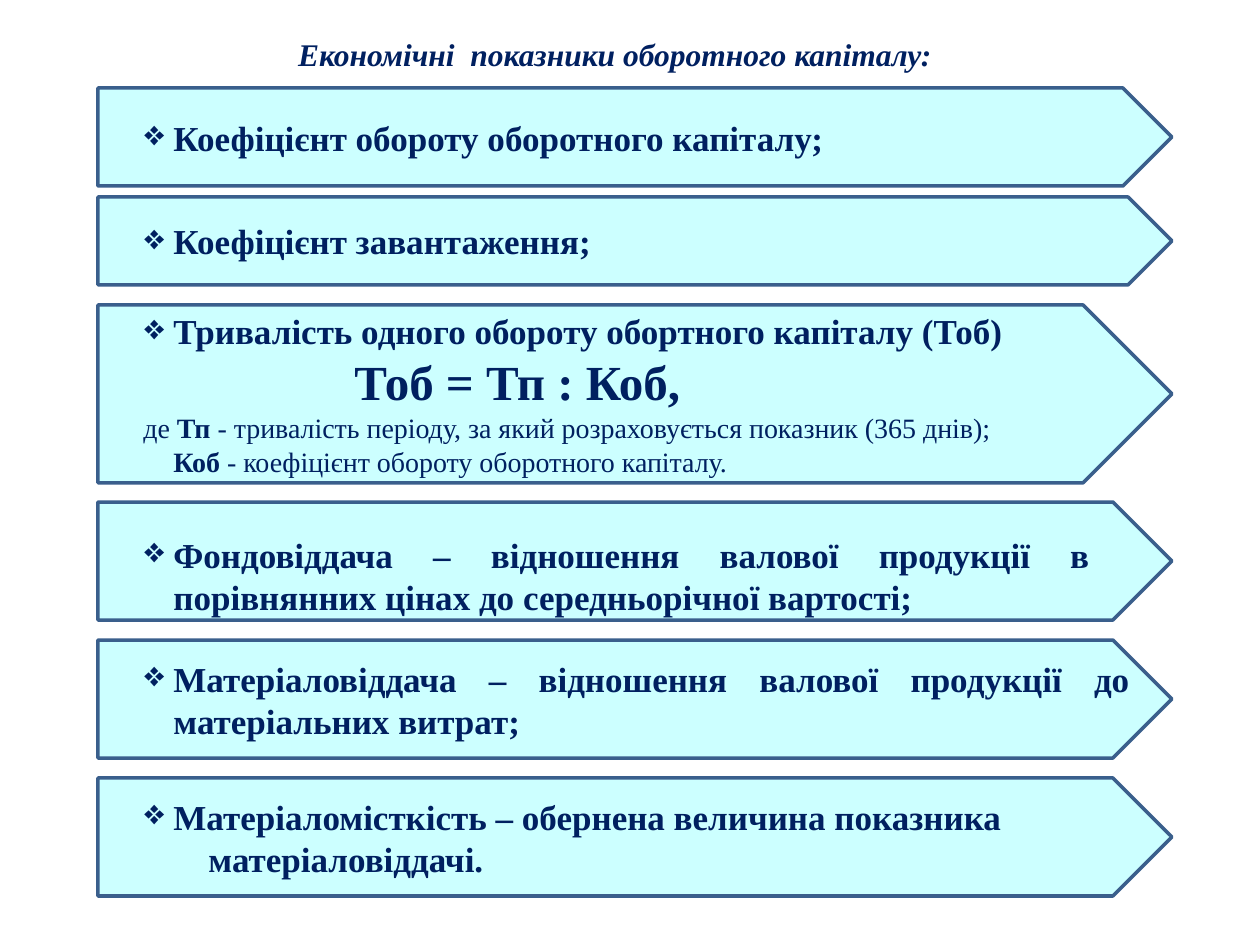
import pptx
import pptx.util
import pptx.dml.color
import pptx.enum.shapes
import pptx.enum.text
import pptx.oxml.ns
import lxml.etree

SCALE = 914400 / 126
FONT = "Times New Roman"
NAVY, AQUA, STEEL = "002060", "CCFFFF", "3A5F8C"
ARROW_LEFT, ARROW_WIDTH = 98, 1074
ITEM_INDENT, BULLET_HANG = 63, 29
ALIGN = pptx.enum.text.PP_ALIGN


def px(length):
    """Turn pixels into EMU."""
    return pptx.util.Emu(round(length * SCALE))


def colour(code):
    """Turn a hex string into a colour."""
    return pptx.dml.color.RGBColor.from_string(code)


def style_span(span, size, bold=True, italic=False):
    """Format one run of text."""
    span.font.name = FONT
    span.font.size = pptx.util.Pt(size)
    span.font.bold = bold
    span.font.italic = italic
    span.font.color.rgb = colour(NAVY)


def indent(para, left, hang=0):
    """Set the left margin and hanging indent of a paragraph."""
    properties = para._p.get_or_add_pPr()
    properties.set("marL", str(px(left)))
    properties.set("indent", str(-px(hang)))
    return properties


def add_bullet(para):
    """Give a paragraph the diamond bullet."""
    properties = indent(para, ITEM_INDENT, BULLET_HANG)
    bullet = lxml.etree.SubElement(properties, pptx.oxml.ns.qn("a:buChar"))
    bullet.set("char", "❖")


def add_title(page, text):
    """Place the heading in the title placeholder."""
    box = page.shapes.title
    box.left, box.top, box.width, box.height = px(108), px(29), px(1014), px(50)
    frame = box.text_frame
    frame.text = text
    frame.word_wrap = True
    frame.auto_size = pptx.enum.text.MSO_AUTO_SIZE.NONE
    frame.paragraphs[0].alignment = ALIGN.CENTER
    style_span(frame.paragraphs[0].runs[0], 18, italic=True)


def add_arrow(page, top, height, item):
    """Draw one pentagon arrow with a bulleted item and return its text frame."""
    box = page.shapes.add_shape(
        pptx.enum.shapes.MSO_SHAPE.PENTAGON,
        px(ARROW_LEFT), px(top), px(ARROW_WIDTH), px(height))
    box.shadow.inherit = False
    box.fill.solid()
    box.fill.fore_color.rgb = colour(AQUA)
    box.line.color.rgb = colour(STEEL)
    box.line.width = pptx.util.Pt(2)
    frame = box.text_frame
    frame.word_wrap = True
    frame.vertical_anchor = pptx.enum.text.MSO_ANCHOR.MIDDLE
    para = frame.paragraphs[0]
    para.text = item
    para.alignment = ALIGN.JUSTIFY
    style_span(para.runs[0], 20)
    add_bullet(para)
    return frame


def add_line(frame, left, size, *spans):
    """Append an indented paragraph made of (text, bold) spans."""
    para = frame.add_paragraph()
    para.alignment = ALIGN.JUSTIFY
    indent(para, left)
    for text, bold in spans:
        span = para.add_run()
        span.text = text
        style_span(span, size, bold)


def main():
    """Build and save the slide."""
    deck = pptx.Presentation()
    deck.slide_width, deck.slide_height = px(1260), px(945)
    page = deck.slides.add_slide(deck.slide_layouts[5])
    add_title(page, "Економічні  показники оборотного капіталу:")

    add_arrow(page, 88, 98, "Коефіцієнт обороту оборотного капіталу;")
    add_arrow(page, 197, 88, "Коефіцієнт завантаження;")

    duration = add_arrow(page, 305, 178, "Тривалість одного обороту обортного капіталу (Тоб)")
    add_line(duration, 244, 28, ("Тоб = Тп : Коб,", True))
    add_line(duration, 33, 16, ("де ", False), ("Тп", True),
             (" - тривалість періоду, за який розраховується показник (365 днів);", False))
    add_line(duration, ITEM_INDENT, 16, ("Коб", True),
             (" - коефіцієнт обороту оборотного капіталу.", False))

    output = add_arrow(page, 502, 118, "Фондовіддача – відношення валової продукції в  "
                       "порівнянних цінах до середньорічної вартості;")
    output.margin_top = px(35)
    add_arrow(page, 640, 118, "Матеріаловіддача – відношення валової продукції "
              "до матеріальних витрат;")
    intensity = add_arrow(page, 778, 118, "Матеріаломісткість – обернена величина показника")
    add_line(intensity, 98, 20, ("матеріаловіддачі.", True))
    deck.save("out.pptx")


if __name__ == "__main__":
    main()
